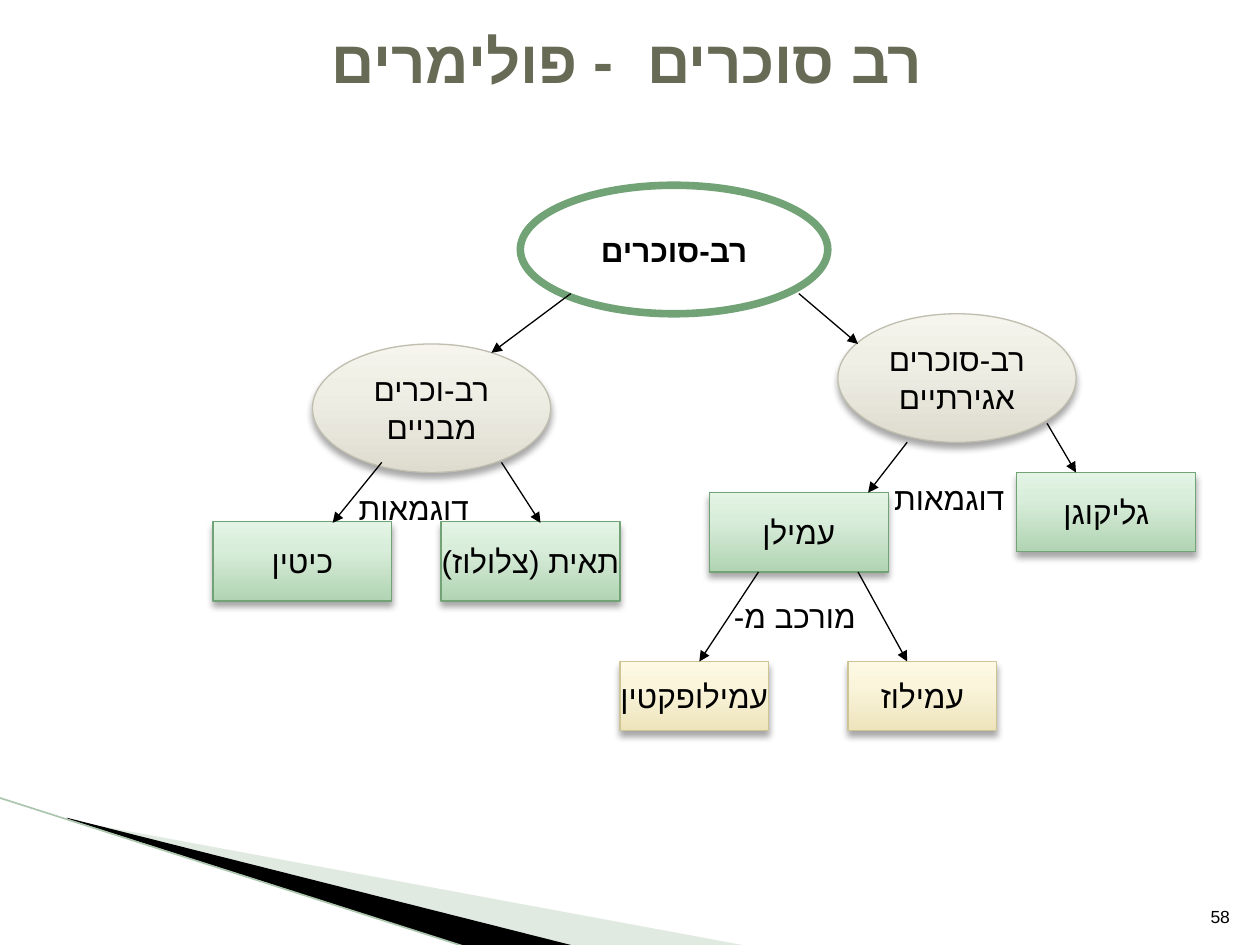
from lxml.etree import SubElement
from pptx import Presentation
from pptx.dml.color import RGBColor
from pptx.enum.shapes import MSO_CONNECTOR, MSO_SHAPE
from pptx.enum.text import MSO_ANCHOR, MSO_AUTO_SIZE, PP_ALIGN
from pptx.oxml import parse_xml
from pptx.oxml.ns import nsdecls, qn
from pptx.util import Inches, Pt

MONO, SANS = "DejaVu Sans Mono", "Arial"
BLACK = "000000"

# Content
TITLE = "רב סוכרים  - פולימרים"
TITLE_SIZE = 34.2
NUMBER = "58"
ROOT = ("רב-סוכרים", 4.13, 1.47, 2.44, 1.02)

# kind: shape, width, height, line, gradient from bottom to top
STYLES = {
    "group": (MSO_SHAPE.OVAL, 1.89, 1.02, "C0BEAF", ("DEDCCF", "F0EFE6", "F5F4ED")),
    "example": (MSO_SHAPE.RECTANGLE, 1.42, 0.63, "72A376", ("B1D4B3", "D8EDDA", "E3F4E4")),
    "part": (MSO_SHAPE.RECTANGLE, 1.18, 0.55, "CEC597", ("EDE4BC", "FAF4DB", "FDF9E4")),
}
STOPS = (0, 65, 100)

# kind, left, top, lines
NODES = [
    ("group", 6.65, 2.49, ["רב-סוכרים", "אגירתיים"]),
    ("group", 2.48, 2.73, ["רב-וכרים", "מבניים"]),
    ("example", 1.69, 4.14, ["כיטין"]),
    ("example", 3.5, 4.14, ["תאית (צלולוז)"]),
    ("example", 5.63, 3.91, ["עמילן"]),
    ("example", 8.07, 3.75, ["גליקוגן"]),
    ("part", 4.92, 5.25, ["עמילופקטין"]),
    ("part", 6.73, 5.25, ["עמילוז"]),
]
ARROWS = [
    (4.53, 2.33, 3.9, 2.8), (6.34, 2.33, 6.81, 2.73),
    (7.2, 3.51, 6.89, 3.91), (8.31, 3.36, 8.54, 3.75),
    (3.03, 3.67, 2.64, 4.15), (3.98, 3.67, 4.29, 4.15),
    (6.02, 4.54, 5.55, 5.25), (6.81, 4.54, 7.2, 5.25),
]
# text, left, top, width
LABELS = [("דוגמאות", 6.97, 3.75, 1.1), ("דוגמאות", 2.72, 3.83, 1.1),
          ("מורכב מ-", 5.39, 4.69, 1.5)]
# colour, opacity in percent, points
WEDGES = [
    ("B3CBB5", 40, [(0.55, 6.51), (5.95, 7.51), (4.56, 7.51), (0.55, 6.5)]),
    (BLACK, 100, [(0.53, 6.49), (4.57, 7.51), (3.72, 7.52), (0.54, 6.5)]),
]

prs = Presentation()
prs.slide_width, prs.slide_height = Inches(10), Inches(7.5)
s = prs.slides.add_slide(prs.slide_layouts[5])


def rgb(color):
    return RGBColor.from_string(color)


def box(*lengths):
    return [Inches(v) for v in lengths]


def write(tf, lines, size=18, color=BLACK, bold=False, align=PP_ALIGN.CENTER,
          anchor=MSO_ANCHOR.MIDDLE, wrap=False, font=MONO):
    """Write right-to-left lines, one paragraph each."""
    tf.word_wrap = wrap
    tf.vertical_anchor = anchor
    for i, line in enumerate(lines):
        p = tf.add_paragraph() if i else tf.paragraphs[0]
        p.alignment = align
        p._p.get_or_add_pPr().set("rtl", "1")
        r = p.add_run()
        r.text = line
        r.font.size, r.font.bold, r.font.name = Pt(size), bold, font
        r.font.color.rgb = rgb(color)
        rPr = r._r.get_or_add_rPr()
        rPr.set("lang", "he-IL")
        SubElement(rPr, qn("a:cs"), typeface=SANS)


def add_line(x1, y1, x2, y2, color, width, arrow=False):
    line = s.shapes.add_connector(MSO_CONNECTOR.STRAIGHT, *box(x1, y1, x2, y2))
    line.line.color.rgb = rgb(color)
    line.line.width = Pt(width)
    if arrow:
        SubElement(line.line._get_or_add_ln(), qn("a:tailEnd"), type="triangle")
    SubElement(line._element.spPr, qn("a:effectLst"))


def add_shape(kind, lines, place, line_color, line_width, bold=False):
    sp = s.shapes.add_shape(kind, *box(*place))
    sp.shadow.inherit = False
    sp.fill.solid()
    sp.fill.fore_color.rgb = rgb("FFFFFF")
    sp.line.color.rgb = rgb(line_color)
    sp.line.width = Pt(line_width)
    write(sp.text_frame, lines, bold=bold)
    return sp


def shade(sp, colors):
    """Give a shape a three-stop gradient and a soft shadow below."""
    stops = "".join(f'<a:gs pos="{pos * 1000}"><a:srgbClr val="{c}"/></a:gs>'
                    for pos, c in zip(STOPS, colors))
    grad = parse_xml(f'<a:gradFill {nsdecls("a")}><a:gsLst>{stops}</a:gsLst>'
                     '<a:lin ang="16200000" scaled="0"/></a:gradFill>')
    shadow = parse_xml(
        f'<a:outerShdw {nsdecls("a")} blurRad="{Pt(4)}" dist="{Pt(3)}" dir="5400000" '
        f'rotWithShape="0"><a:srgbClr val="{BLACK}"><a:alpha val="35000"/></a:srgbClr>'
        '</a:outerShdw>')
    spPr = sp._element.spPr
    spPr.replace(spPr.find(qn("a:solidFill")), grad)
    spPr.find(qn("a:effectLst")).append(shadow)


# Corner decoration
for color, opacity, points in WEDGES:
    start, *rest = [tuple(box(*point)) for point in points]
    fb = s.shapes.build_freeform(*start)
    fb.add_line_segments(rest, close=True)
    sp = fb.convert_to_shape()
    sp.shadow.inherit = False
    sp.fill.solid()
    sp.fill.fore_color.rgb = rgb(color)
    sp.line.fill.background()
    if opacity < 100:
        clr = sp._element.spPr.find(qn("a:solidFill"))[0]
        SubElement(clr, qn("a:alpha"), val=str(opacity * 1000))
add_line(-0.01, 6.33, 3.71, 7.52, "ACC6AE", 0.95)

# Slide number and title
tb = s.shapes.add_textbox(*box(9.46, 7.01, 0.4, 0.4))
write(tb.text_frame, [NUMBER], size=10, align=PP_ALIGN.RIGHT,
      anchor=MSO_ANCHOR.BOTTOM, wrap=True)

title = s.shapes.title
title.left, title.top, title.width, title.height = box(0.39, 0.29, 9.17, 0.94)
title.text_frame.auto_size = MSO_AUTO_SIZE.NONE
write(title.text_frame, [TITLE], size=TITLE_SIZE, color="676A55", bold=True, wrap=True)
p = title.text_frame.paragraphs[0]
p.add_line_break()
# The line after the break takes the title size too
size = str(round(TITLE_SIZE * 100))
SubElement(p._p.find(qn("a:br")), qn("a:rPr"), sz=size)
SubElement(p._p, qn("a:endParaRPr"), sz=size)

# Tree
root_text, *root_place = ROOT
add_shape(MSO_SHAPE.OVAL, [root_text], root_place, "72A376", 4.33, bold=True)
for kind, left, top, lines in NODES:
    shape, width, height, line_color, colors = STYLES[kind]
    sp = add_shape(shape, lines, (left, top, width, height), line_color, 0.75)
    shade(sp, colors)
for ends in ARROWS:
    add_line(*ends, BLACK, 0.75, arrow=True)

# Branch labels
for text, left, top, width in LABELS:
    tb = s.shapes.add_textbox(*box(left, top, width, 0.4))
    write(tb.text_frame, [text], align=PP_ALIGN.RIGHT, anchor=MSO_ANCHOR.TOP,
          wrap=True, font=SANS)
    tb.text_frame.auto_size = MSO_AUTO_SIZE.SHAPE_TO_FIT_TEXT

prs.save("out.pptx")
